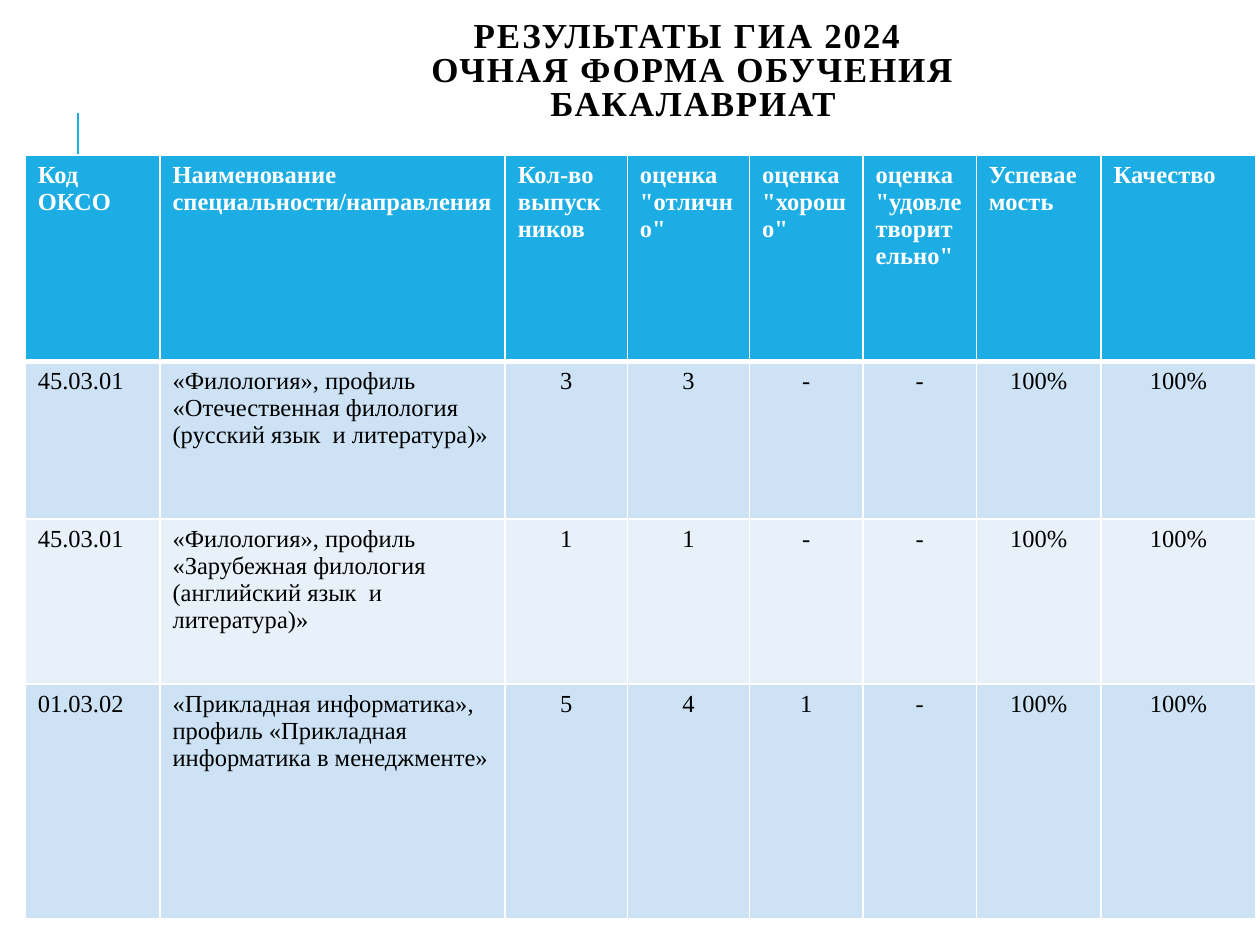
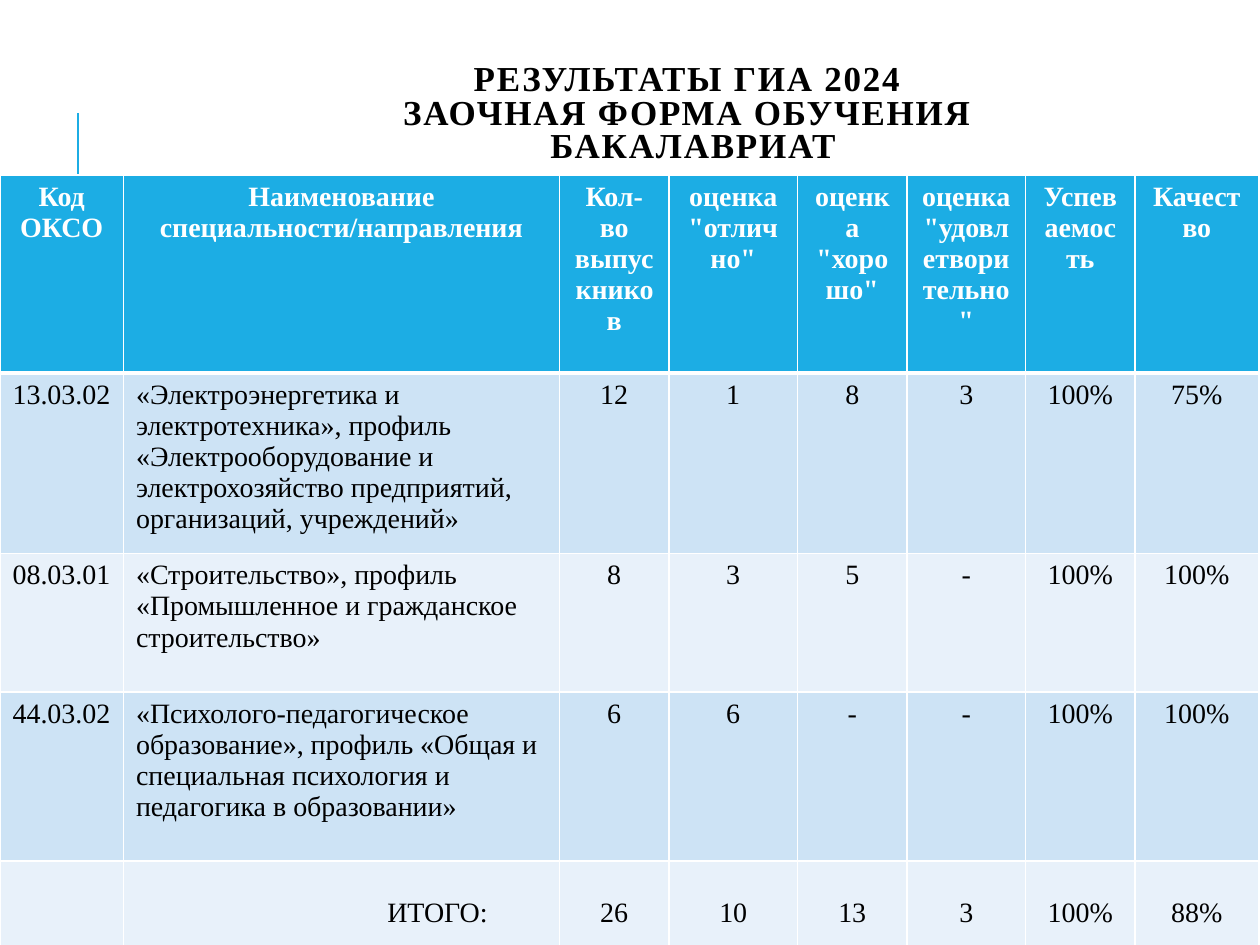
from lxml.etree import SubElement as Sub
from pptx import Presentation
from pptx.dml.color import RGBColor as Rgb
from pptx.enum.shapes import MSO_CONNECTOR as Conn
from pptx.enum.text import MSO_ANCHOR as Anchor, PP_ALIGN as Align
from pptx.oxml.ns import qn
from pptx.util import Inches, Pt

BLUE = Rgb(0x1C, 0xAD, 0xE4)
DARK = Rgb(0xCD, 0xE3, 0xF5)
PALE = Rgb(0xE8, 0xF1, 0xFA)
WHITE = Rgb(0xFF, 0xFF, 0xFF)
BLACK = Rgb(0, 0, 0)
FONT = "Times New Roman"

HEAD = ["Код ОКСО", "Наименование специальности/направления",
        "Кол-во выпускников", 'оценка "отлично"', 'оценка "хорошо"',
        'оценка "удовлетворительно"', "Успеваемость", "Качество"]

DAY = [
    ["45.03.01", "«Филология», профиль «Отечественная филология (русский язык  и литература)»",
     "3", "3", "-", "-", "100%", "100%"],
    ["45.03.01", "«Филология», профиль «Зарубежная филология (английский язык  и литература)»",
     "1", "1", "-", "-", "100%", "100%"],
    ["01.03.02", "«Прикладная информатика», профиль «Прикладная информатика в менеджменте»",
     "5", "4", "1", "-", "100%", "100%"],
]
REMOTE = [
    ["13.03.02", "«Электроэнергетика и электротехника», профиль «Электрооборудование и "
     "электрохозяйство предприятий, организаций, учреждений»",
     "12", "1", "8", "3", "100%", "75%"],
    ["08.03.01", "«Строительство», профиль\n«Промышленное и гражданское строительство»",
     "8", "3", "5", "-", "100%", "100%"],
    ["44.03.02", "«Психолого-педагогическое образование», профиль «Общая и специальная "
     "психология и педагогика в образовании»",
     "6", "6", "-", "-", "100%", "100%"],
    ["", "ИТОГО:", "26", "10", "13", "3", "100%", "88%"],
]


def add_run(para, text, size, color, bold=False):
    run = para.add_run()
    run.text = text
    font = run.font
    font.name, font.size, font.bold = FONT, Pt(size), bold
    font.color.rgb = color
    return run


def add_rule(slide, left, top, high):
    rule = slide.shapes.add_connector(
        Conn.STRAIGHT, Inches(left), Inches(top + high), Inches(left), Inches(top))
    rule.line.color.rgb = BLUE
    rule.line.width = Pt(1.5)
    Sub(rule._element.spPr, qn("a:effectLst"))


def add_title(slide, box, lines):
    frame = slide.shapes.add_textbox(*map(Inches, box)).text_frame
    frame.word_wrap = True
    frame.vertical_anchor = Anchor.MIDDLE
    para = frame.paragraphs[0]
    para.alignment = Align.CENTER
    para.line_spacing = 0.8
    for i, line in enumerate(lines):
        if i:
            para.add_line_break()
        run = add_run(para, line, 20, BLACK, True)
        run._r.get_or_add_rPr().set("spc", "100")


def set_edges(cell, row):
    props = cell._tc.get_or_add_tcPr()
    wide = {"lnT": 3 if row == 1 else 1, "lnB": 3 if row == 0 else 1}
    for side in ("lnL", "lnR", "lnT", "lnB"):
        edge = Sub(props, qn(f"a:{side}"), w=str(Pt(wide.get(side, 1))))
        fill = Sub(edge, qn("a:solidFill"))
        Sub(fill, qn("a:srgbClr"), val=str(WHITE))


def fill_cell(cell, row, text, size, align):
    set_edges(cell, row)
    cell.fill.solid()
    cell.fill.fore_color.rgb = BLUE if row == 0 else DARK if row % 2 else PALE
    frame = cell.text_frame
    for i, line in enumerate(text.split("\n")):
        para = frame.add_paragraph() if i else frame.paragraphs[0]
        para.alignment = align
        para.font.size = Pt(size)
        if line:
            add_run(para, line, size, BLACK if row else WHITE, row == 0)


def add_grid(slide, left, top, cols, rows, data, size, top_align):
    grid = slide.shapes.add_table(
        len(rows), len(cols), Inches(left), Inches(top),
        Inches(sum(cols)), Inches(sum(rows))).table
    for col, wide in zip(grid.columns, cols):
        col.width = Inches(wide)
    for row, high in zip(grid.rows, rows):
        row.height = Inches(high)
    for r, line in enumerate([HEAD] + data):
        for c, text in enumerate(line):
            align = top_align if r == 0 else Align.LEFT if c < 2 else Align.CENTER
            fill_cell(grid.cell(r, c), r, text, size, align)
    return grid


def set_total(grid):
    last = len(grid.rows) - 1
    for c in range(len(grid.columns)):
        grid.cell(last, c).margin_top = Inches(0.29)
    label = grid.cell(last, 1)
    label.margin_right = Inches(0.57)
    label.text_frame.paragraphs[0].alignment = Align.RIGHT


def add_page(deck, box, form):
    slide = deck.slides.add_slide(deck.slide_layouts[6])
    add_rule(slide, 0.62, 0.9, 1)
    add_title(slide, box, ["РЕЗУЛЬТАТЫ ГИА 2024 ", form, "БАКАЛАВРИАТ"])
    return slide


def main():
    deck = Presentation()
    deck.slide_width, deck.slide_height = Inches(10), Inches(7.5)

    day = add_page(deck, (1, 0, 9, 1.15), "ОЧНАЯ ФОРМА ОБУЧЕНИЯ")
    add_grid(day, 0.2, 1.23, [1.07, 2.74, 0.97, 0.97, 0.9, 0.9, 0.99, 1.23],
             [1.64, 1.25, 1.31, 1.86], DAY, 14, Align.LEFT)

    remote = add_page(deck, (1, 0.21, 9, 1.41), "ЗАОЧНАЯ ФОРМА ОБУЧЕНИЯ ")
    grid = add_grid(remote, 0, 1.39, [0.98, 3.46, 0.87, 1.02, 0.87, 0.94, 0.87, 0.98],
                    [1.57, 1.34, 1.1, 1.34, 0.76], REMOTE, 16, Align.CENTER)
    set_total(grid)

    deck.save("out.pptx")


if __name__ == "__main__":
    main()
